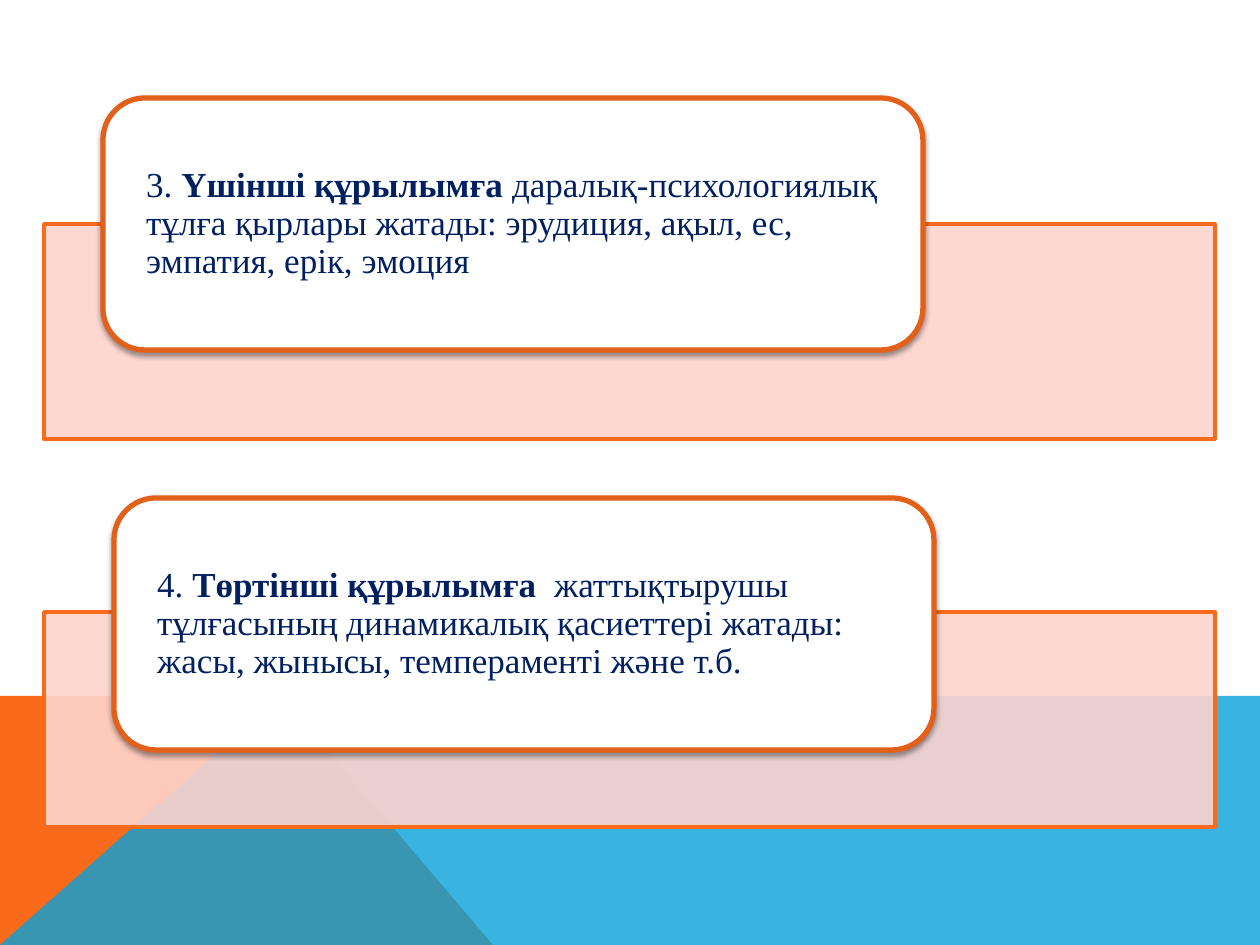
from pptx import Presentation, util as u
from pptx.dml.color import RGBColor
from pptx.enum import shapes, text
from pptx.oxml import ns
from lxml import etree

PX = u.Inches(1) / 126
ORANGE = RGBColor(0xF9, 0x6A, 0x1B)
DARK_ORANGE = RGBColor(0xE2, 0x60, 0x19)
BLUE = RGBColor(0x08, 0xA1, 0xD9)
PINK = RGBColor(0xFD, 0xD4, 0xCD)
WHITE = RGBColor(0xFF, 0xFF, 0xFF)
NAVY = RGBColor(0x00, 0x20, 0x60)

# card left, card top, band top, number, bold term, description
ITEMS = [
    (103, 98, 224, "3. ", "Үшінші құрылымға ",
     "даралық-психологиялық тұлға қырлары жатады: эрудиция, ақыл, ес, эмпатия, ерік, эмоция"),
    (114, 498, 612, "4. ", "Төртінші құрылымға  ",
     "жаттықтырушы тұлғасының динамикалық қасиеттері жатады: жасы, жынысы, темпераменті және т.б."),
]


def px(n):
    return u.Emu(round(n * PX))


def set_alpha(color, percent):
    etree.SubElement(color, ns.qn("a:alpha"), val=str(percent * 1000))


def paint(sp, fill, alpha=100, line=None, width=0):
    sp.shadow.inherit = False
    sp.fill.solid()
    sp.fill.fore_color.rgb = fill
    if alpha < 100:
        set_alpha(sp._element.spPr.find(ns.qn("a:solidFill"))[0], alpha)
    if line is None:
        sp.line.fill.background()
    else:
        sp.line.color.rgb = line
        sp.line.width = u.Pt(width)


def add_shadow(sp):
    effects = sp._element.spPr.find(ns.qn("a:effectLst"))
    shadow = etree.SubElement(
        effects, ns.qn("a:outerShdw"), blurRad=str(u.Pt(3.1)),
        dist=str(u.Pt(1.6)), dir="5400000", rotWithShape="0")
    set_alpha(etree.SubElement(shadow, ns.qn("a:srgbClr"), val="000000"), 38)


def add_polygon(s, points, fill, alpha=100):
    builder = s.shapes.build_freeform(*points[0], scale=PX)
    builder.add_line_segments(points[1:], close=True)
    paint(builder.convert_to_shape(), fill, alpha)


def add_band(s, top):
    sp = s.shapes.add_shape(shapes.MSO_SHAPE.RECTANGLE,
                            px(44), px(top), px(1171), px(215))
    paint(sp, PINK, 90, ORANGE, 2)


def add_card(s, left, top, runs):
    sp = s.shapes.add_shape(shapes.MSO_SHAPE.ROUNDED_RECTANGLE,
                            px(left), px(top), px(820), px(252))
    paint(sp, WHITE, line=DARK_ORANGE, width=3)
    add_shadow(sp)
    tf = sp.text_frame
    tf.word_wrap = True
    tf.vertical_anchor = text.MSO_ANCHOR.MIDDLE
    # The rounded corners add their own inset to these margins
    tf.margin_left = tf.margin_right = px(31)
    tf.margin_top = tf.margin_bottom = 0
    p = tf.paragraphs[0]
    p.alignment = text.PP_ALIGN.LEFT
    p.line_spacing = 0.9
    p.space_after = u.Pt(7)
    p.font.name = "Times New Roman"
    p.font.size = u.Pt(20)
    p.font.color.rgb = NAVY
    for content, bold in zip(runs, (False, True, False)):
        r = p.add_run()
        r.text = content
        r.font.bold = bold


def main():
    prs = Presentation()
    prs.slide_width, prs.slide_height = px(1260), px(945)
    s = prs.slides.add_slide(prs.slide_layouts[6])

    # Coloured footer
    add_polygon(s, [(0, 945), (0, 696), (281, 696), (493, 945)], ORANGE)
    add_polygon(s, [(0, 945), (281, 696), (1260, 696), (1260, 945)], BLUE, 80)

    # Bands with their cards
    for left, card_top, band_top, *runs in ITEMS:
        add_band(s, band_top)
        add_card(s, left, card_top, runs)

    prs.save("out.pptx")


if __name__ == "__main__":
    main()
